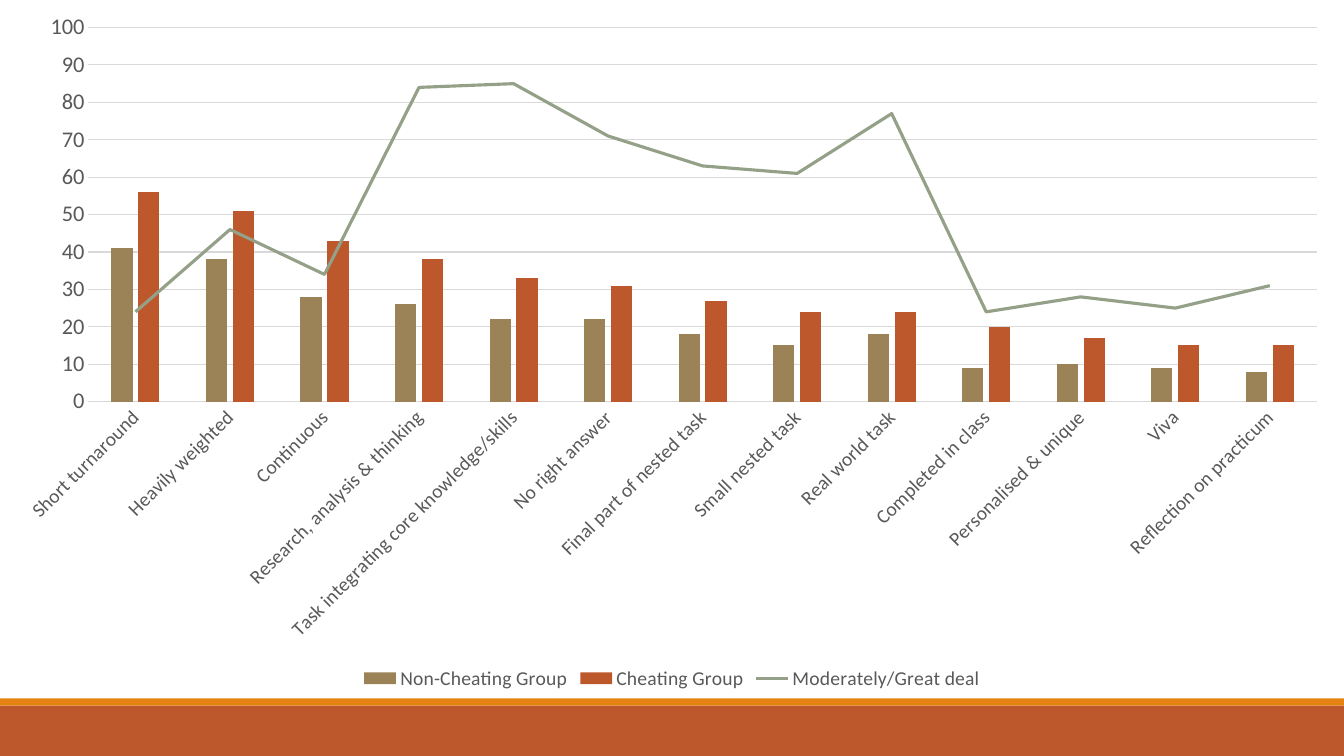
from typing import NamedTuple

from pptx import Presentation
from pptx import util as u
from pptx.chart import data as chart_data
from pptx.dml.color import RGBColor
from pptx.enum import chart as ch
from pptx.enum import shapes
from pptx.oxml import parse_xml
from pptx.oxml.ns import nsdecls, qn

RUST = RGBColor(0xBD, 0x58, 0x2C)
ORANGE = RGBColor(0xE4, 0x83, 0x12)
KHAKI = RGBColor(0x9B, 0x83, 0x57)
SAGE = RGBColor(0x94, 0xA0, 0x88)
TEXT_GREY = RGBColor(0x59, 0x59, 0x59)
GRID_GREY = RGBColor(0xD9, 0xD9, 0xD9)

SLIDE_WIDTH, SLIDE_HEIGHT = u.Cm(33.87), u.Cm(19.05)
CHART_HEIGHT = u.Cm(17.5)
FONT_NAME = "Calibri"


class Band(NamedTuple):
    top: float
    height: float
    color: RGBColor


class Series(NamedTuple):
    name: str
    color: RGBColor
    values: tuple[int, ...]


BANDS = (Band(17.78, 1.27, RUST), Band(17.6, 0.18, ORANGE))

CATEGORIES = (
    "Short turnaround", "Heavily weighted", "Continuous",
    "Research, analysis & thinking", "Task integrating core knowledge/skills",
    "No right answer", "Final part of nested task", "Small nested task",
    "Real world task", "Completed in class", "Personalised & unique",
    "Viva", "Reflection on practicum",
)
COLUMNS = (
    Series("Non-Cheating Group", KHAKI,
           (41, 38, 28, 26, 22, 22, 18, 15, 18, 9, 10, 9, 8)),
    Series("Cheating Group", RUST,
           (56, 51, 43, 38, 33, 31, 27, 24, 24, 20, 17, 15, 15)),
)
LINE = Series("Moderately/Great deal", SAGE,
              (24, 46, 34, 84, 85, 71, 63, 61, 77, 24, 28, 25, 31))


def draw_band(slide, band: Band) -> None:
    shape = slide.shapes.add_shape(
        shapes.MSO_SHAPE.RECTANGLE, 0, u.Cm(band.top), SLIDE_WIDTH, u.Cm(band.height))
    shape.shadow.inherit = False
    shape.fill.solid()
    shape.fill.fore_color.rgb = band.color
    shape.line.fill.background()


def style_font(font, size: int) -> None:
    font.name = FONT_NAME
    font.size = u.Pt(size)
    font.color.rgb = TEXT_GREY


def style_line(line, color: RGBColor, width: float) -> None:
    line.color.rgb = color
    line.width = u.Pt(width)


def move_last_series_to_line(chart) -> None:
    """Turn the last column series into a line on the same axes."""
    bar_chart = chart._chartSpace.find(f".//{qn('c:barChart')}")
    series = bar_chart.findall(qn("c:ser"))[-1]
    for bar_setting in series.findall(qn("c:invertIfNegative")):
        series.remove(bar_setting)
    line_chart = parse_xml(
        f'<c:lineChart {nsdecls("c")}><c:grouping val="standard"/>'
        '<c:varyColors val="0"/><c:marker val="1"/></c:lineChart>')
    line_chart.insert(2, series)
    for axis in bar_chart.findall(qn("c:axId")):
        line_chart.append(parse_xml(
            f'<c:axId {nsdecls("c")} val="{axis.get("val")}"/>'))
    bar_chart.addnext(line_chart)


def draw_chart(slide) -> None:
    data = chart_data.CategoryChartData()
    data.categories = CATEGORIES
    for series in (*COLUMNS, LINE):
        data.add_series(series.name, series.values)
    chart = slide.shapes.add_chart(
        ch.XL_CHART_TYPE.COLUMN_CLUSTERED, 0, 0, SLIDE_WIDTH, CHART_HEIGHT, data).chart
    chart.has_title = False
    style_font(chart.font, 10)
    move_last_series_to_line(chart)

    # Columns and line
    columns, line = chart.plots
    columns.gap_width, columns.overlap = 219, -27
    columns.vary_by_categories = False
    for plotted, series in zip(columns.series, COLUMNS):
        plotted.format.fill.solid()
        plotted.format.fill.fore_color.rgb = series.color
    trend = line.series[0]
    trend.smooth = False
    trend.marker.style = ch.XL_MARKER_STYLE.NONE
    style_line(trend.format.line, LINE.color, 2.25)

    # Axes
    category_axis, value_axis = chart.category_axis, chart.value_axis
    for axis, size in ((category_axis, 14), (value_axis, 16)):
        axis.major_tick_mark = axis.minor_tick_mark = ch.XL_TICK_MARK.NONE
        style_font(axis.tick_labels.font, size)
    style_line(category_axis.format.line, GRID_GREY, 0.75)
    label_body = category_axis._element.find(f".//{qn('a:bodyPr')}")
    label_body.set("rot", "-2700000")
    label_body.set("vert", "horz")
    value_axis.minimum_scale, value_axis.maximum_scale = 0, 100
    value_axis.major_unit = 10
    value_axis.format.line.fill.background()
    style_line(value_axis.major_gridlines.format.line, GRID_GREY, 0.75)

    # Legend
    chart.has_legend = True
    chart.legend.position = ch.XL_LEGEND_POSITION.BOTTOM
    chart.legend.include_in_layout = False
    style_font(chart.legend.font, 14)


def main() -> None:
    presentation = Presentation()
    presentation.slide_width, presentation.slide_height = SLIDE_WIDTH, SLIDE_HEIGHT
    slide = presentation.slides.add_slide(presentation.slide_layouts[6])
    for band in BANDS:
        draw_band(slide, band)
    draw_chart(slide)
    presentation.save("out.pptx")


if __name__ == "__main__":
    main()
